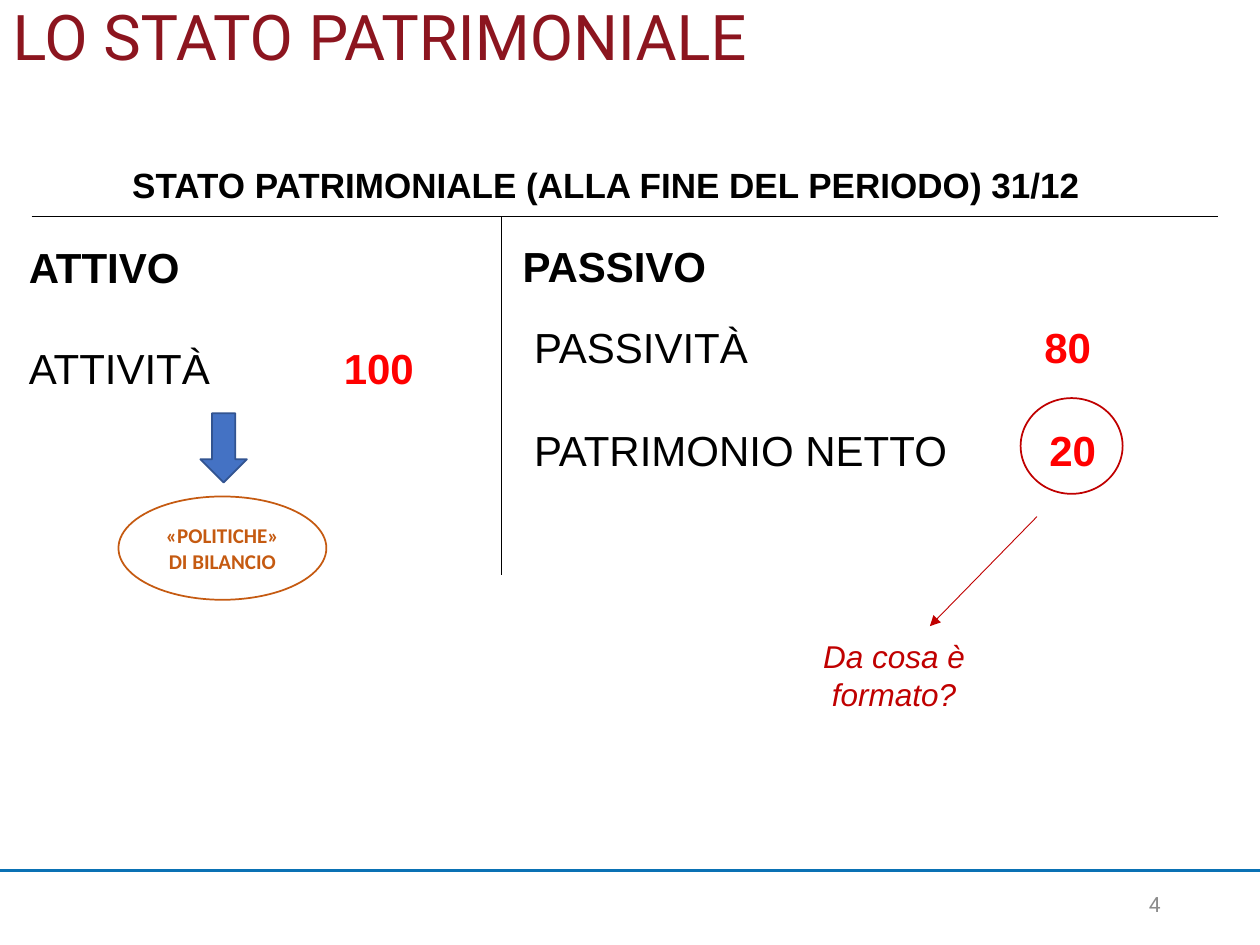
from lxml import etree
from pptx import Presentation
from pptx.dml.color import RGBColor
from pptx.enum.shapes import MSO_CONNECTOR, MSO_SHAPE
from pptx.enum.text import MSO_ANCHOR, PP_ALIGN
from pptx.oxml import parse_xml
from pptx.oxml.ns import nsdecls, qn
from pptx.util import Inches, Pt

LEFT, CENTER, RIGHT = PP_ALIGN.LEFT, PP_ALIGN.CENTER, PP_ALIGN.RIGHT
TOP, MIDDLE = MSO_ANCHOR.TOP, MSO_ANCHOR.MIDDLE
STRAIGHT = MSO_CONNECTOR.STRAIGHT
OVAL, DOWN_ARROW = MSO_SHAPE.OVAL, MSO_SHAPE.DOWN_ARROW

THEME = {
    "ink": RGBColor.from_string("000000"),
    "title": RGBColor.from_string("8C151F"),
    "amount": RGBColor.from_string("FF0000"),
    "equity": RGBColor.from_string("C00000"),
    "policy": RGBColor.from_string("C55A11"),
    "arrow": RGBColor.from_string("4472C4"),
    "arrow_edge": RGBColor.from_string("325491"),
    "footer": RGBColor.from_string("0A71B4"),
    "number": RGBColor.from_string("8C8C8C"),
    "title_size": Pt(36), "entry_size": Pt(24), "heading_size": Pt(20),
    "question_size": Pt(18), "small_size": Pt(12),
}

deck = Presentation()
deck.slide_width, deck.slide_height = Inches(10), Inches(7.5)
COL, ROW = deck.slide_width / 100, deck.slide_height / 75
slide = deck.slides.add_slide(deck.slide_layouts[5])


def grid(left, top, width, height):
    """Turn columns and rows into lengths."""
    return [round(n * unit) for n, unit in zip((left, top, width, height), (COL, ROW) * 2)]


def write(paragraph, text, size, color, face="Arial", bold=False, italic=False, align=LEFT):
    paragraph.alignment = align
    run = paragraph.add_run()
    run.text = text
    look = {"name": face, "size": THEME[size], "bold": bold, "italic": italic}
    for key, value in look.items():
        setattr(run.font, key, value)
    run.font.color.rgb = THEME[color]
    return run


# Footer rule, the T of the account and the arrow to the question
for start, end, color, weight in [
    ((0, 69.1), (100, 69.1), "footer", 1.5),
    ((2.5, 17.2), (96.7, 17.2), "ink", 0.75),
    ((39.8, 17.2), (39.8, 45.6), "ink", 0.75),
    ((82.3, 41), (73.8, 49.7), "equity", 0.5),
]:
    rule = slide.shapes.add_connector(STRAIGHT, *grid(*start, *end))
    rule.line.color.rgb, rule.line.width = THEME[color], Pt(weight)
    etree.SubElement(rule._element.spPr, qn("a:effectLst"))
question_arrow = rule
question_arrow.line._get_or_add_ln().append(
    parse_xml(f'<a:tailEnd type="triangle" {nsdecls("a")}/>'))

# Title
title = slide.shapes.title
title.left, title.top, title.width, title.height = grid(0, 0, 100, 11.1)
title.text_frame.vertical_anchor = TOP
title.text_frame.paragraphs[0].line_spacing = 0.9
write(title.text_frame.paragraphs[0], "LO STATO PATRIMONIALE", "title_size", "title", "Roboto")

# Single-line texts
for text, place, form in [
    ("STATO PATRIMONIALE (ALLA FINE DEL PERIODO) 31/12", (3.1, 12.5, 90, 12.5),
     {"size": "heading_size", "color": "ink", "bold": True, "align": CENTER}),
    ("ATTIVO", (1.3, 18.7, 37.9, 5),
     {"size": "entry_size", "color": "ink", "bold": True}),
    ("PASSIVO", (40.5, 18.6, 20, 5),
     {"size": "entry_size", "color": "ink", "bold": True}),
    ("Da cosa è formato?", (59.9, 50.1, 22.1, 7.1),
     {"size": "question_size", "color": "equity", "italic": True, "align": CENTER}),
]:
    box = slide.shapes.add_textbox(*grid(*place))
    box.text_frame.word_wrap = True
    write(box.text_frame.paragraphs[0], text, **form)

# Entries: name, amount and the column where the amount starts
for place, entries in [
    ((1.3, 26.7, 37.9, 5), [("ATTIVITÀ", "100", 25)]),
    ((41.4, 25, 51.1, 13.1), [("PASSIVITÀ", "80", 40.5), ("PATRIMONIO NETTO", "20", 40.9)]),
]:
    box = slide.shapes.add_textbox(*grid(*place))
    box.text_frame.word_wrap = True
    for row, (name, amount, stop) in enumerate(entries):
        entry = box.text_frame.add_paragraph() if row else box.text_frame.paragraphs[0]
        if row:
            entry.space_before = Pt(30)
        tabs = etree.SubElement(entry._p.get_or_add_pPr(), qn("a:tabLst"))
        etree.SubElement(tabs, qn("a:tab"), pos=str(round(stop * COL)), algn="l")
        write(entry, name + "\t", "entry_size", "ink")
        write(entry, amount, "entry_size", "amount", bold=True)

# Arrow to the policies, ring round the equity, policies
for kind, place, fill, edge, text in [
    (DOWN_ARROW, (15.9, 32.8, 3.7, 5.5), "arrow", "arrow_edge", ""),
    (OVAL, (81, 31.6, 8.1, 7.6), None, "equity", ""),
    (OVAL, (9.4, 39.4, 16.5, 8.2), None, "policy", "«POLITICHE» DI BILANCIO"),
]:
    figure = slide.shapes.add_shape(kind, *grid(*place))
    figure.shadow.inherit = False
    if fill:
        figure.fill.solid()
        figure.fill.fore_color.rgb = THEME[fill]
    else:
        figure.fill.background()
    figure.line.color.rgb, figure.line.width = THEME[edge], Pt(1)
    if text:
        figure.text_frame.word_wrap = True
        figure.text_frame.vertical_anchor = MIDDLE
        write(figure.text_frame.paragraphs[0], text, "small_size", edge,
              "Calibri", bold=True, align=CENTER)

# Slide number
number = slide.shapes.add_textbox(*grid(70.6, 70.3, 22.5, 4))
number.text_frame.word_wrap = True
write(number.text_frame.paragraphs[0], "4", "small_size", "number", "Roboto", align=RIGHT)

deck.save("out.pptx")
